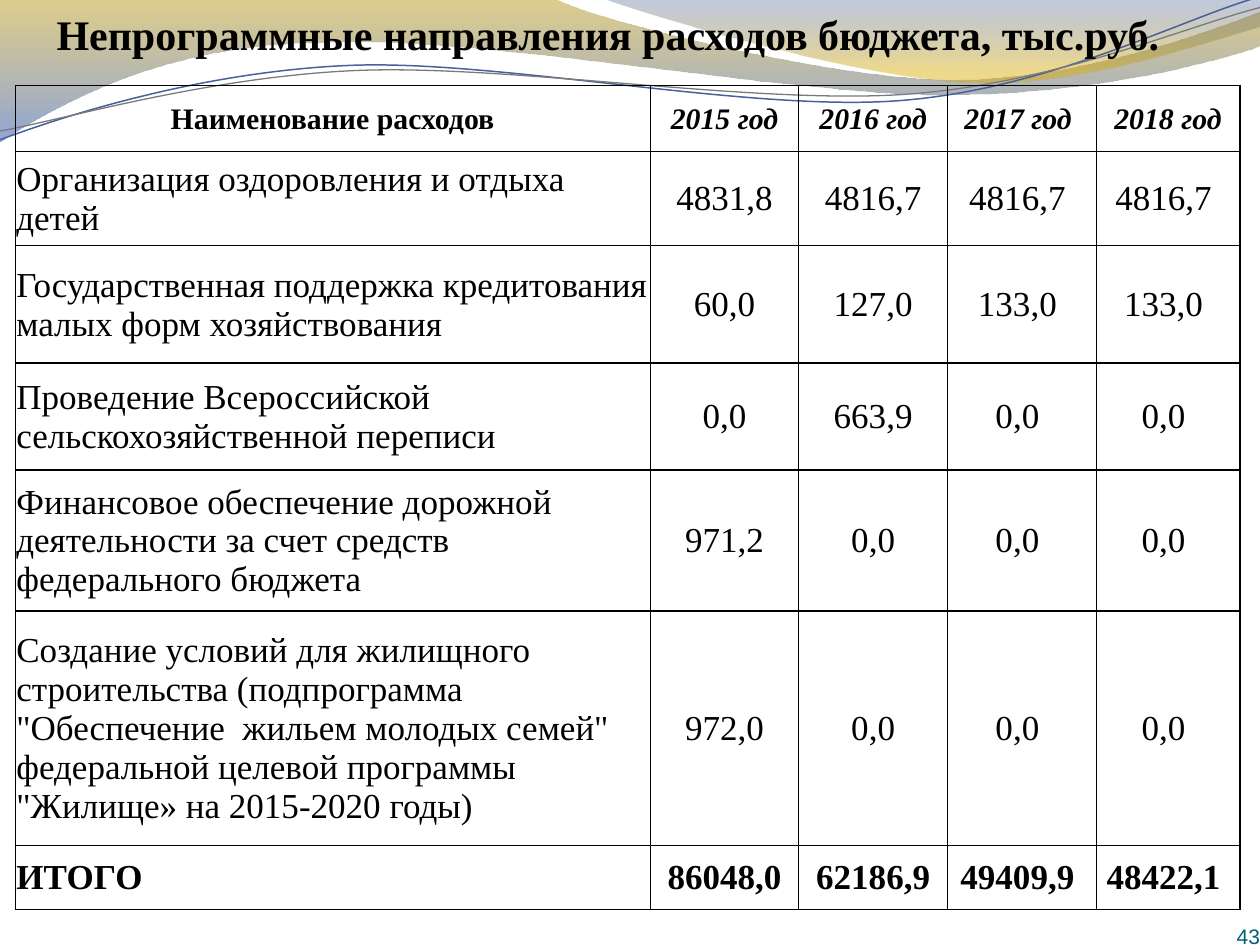
from lxml import etree
from pptx import Presentation
from pptx.dml.color import RGBColor
from pptx.enum.text import MSO_ANCHOR, PP_ALIGN
from pptx.oxml.ns import qn
from pptx.util import Inches, Pt

MIDDLE, BOTTOM, TOP = MSO_ANCHOR.MIDDLE, MSO_ANCHOR.BOTTOM, MSO_ANCHOR.TOP
LEFT, CENTER, RIGHT = PP_ALIGN.LEFT, PP_ALIGN.CENTER, PP_ALIGN.RIGHT

BLACK = RGBColor(0x00, 0x00, 0x00)
TEAL = RGBColor(0x04, 0x5D, 0x75)
GOLD = RGBColor(0xB6, 0x90, 0x00)
BLUE = RGBColor(0x33, 0x59, 0xB7)
NAVY = RGBColor(0x32, 0x4C, 0x8D)
YELLOW = RGBColor(0xD9, 0xAC, 0x00)
SLATE = RGBColor(0x48, 0x60, 0x9B)
GRAY = RGBColor(0x7A, 0x7A, 0x7A)
SERIF, SANS = "Times New Roman", "Arial"

# A pair of numbers is a straight step, six numbers are a cubic curve.
BIG_WAVE = [
    (0, -0.01), (4.4, -0.01),
    (4.76, 0.17, 6.64, 0.63, 7.58, 0.63), (8.53, 0.63, 9.58, 0.26, 10, 0.09),
    (10.01, 0.36),
    (9.83, 0.44, 8.7, 0.76, 7.46, 0.75), (6.22, 0.75, 3.82, 0.28, 2.57, 0.34),
    (1.29, 0.35, 0.46, 0.83, -0.01, 1.13), (0, -0.01),
]
SMALL_WAVE = [
    (4.79, -0.01),
    (5.09, 0.11, 6.82, 0.62, 7.69, 0.65), (8.56, 0.69, 9.61, 0.32, 10, 0.21),
    (10, 0), (4.79, -0.01),
]
BLUE_LINE = [
    (0, 1.11),
    (0.48, 0.93, 1.58, 0.57, 2.77, 0.52), (3.95, 0.47, 5.93, 0.89, 7.13, 0.8),
    (8.33, 0.71, 9.38, 0.15, 9.98, -0.02),
]
GRAY_LINE = [
    (0, 1.04),
    (0.47, 0.96, 1.64, 0.61, 2.83, 0.56), (4.03, 0.51, 5.97, 0.83, 7.17, 0.75),
    (8.36, 0.67, 9.41, 0.21, 10, 0.06),
]

COLS = [5.04, 1.18, 1.18, 1.18, 1.14]
HEIGHTS = [0.52, 0.75, 0.93, 0.85, 1.12, 1.86, 0.51]
ROWS = [
    ("Наименование расходов", "2015 год", "2016 год", "2017 год ", "2018 год"),
    ("Организация оздоровления и отдыха детей",
     "4831,8", "4816,7", "4816,7", "4816,7"),
    ("Государственная поддержка кредитования малых форм хозяйствования",
     "60,0", "127,0", "133,0", "133,0"),
    ("Проведение Всероссийской сельскохозяйственной переписи",
     "0,0", "663,9", "0,0", "0,0"),
    ("Финансовое обеспечение дорожной деятельности за счет средств "
     "федерального бюджета", "971,2", "0,0", "0,0", "0,0"),
    ("Создание условий для жилищного строительства (подпрограмма "
     "\"Обеспечение  жильем молодых семей\" федеральной целевой программы "
     "\"Жилище» на 2015-2020 годы)", "972,0", "0,0", "0,0", "0,0"),
    ("ИТОГО", "86048,0", "62186,9", "49409,9", "48422,1"),
]


def bend(shape, steps):
    """Join each three line steps of a curve into one cubic step."""
    lines = iter(list(shape._element.iter(qn("a:lnTo"))))
    for step in steps[1:]:
        first = next(lines)
        if len(step) == 2:
            continue
        curve = etree.Element(qn("a:cubicBezTo"))
        first.addprevious(curve)
        for line in (first, next(lines), next(lines)):
            curve.append(line[0])
            line.getparent().remove(line)


def draw(slide, steps, close):
    points = [(Inches(step[k]), Inches(step[k + 1]))
              for step in steps for k in range(0, len(step), 2)]
    pen = slide.shapes.build_freeform(*points[0])
    pen.add_line_segments(points[1:], close=close)
    shape = pen.convert_to_shape()
    shape.shadow.inherit = False
    bend(shape, steps)
    return shape


def add_wave(slide, steps, stops):
    """Draw a filled band; each stop is position, colour, opacity percent."""
    shape = draw(slide, steps, True)
    shape.line.fill.background()
    shape.fill.gradient()
    shape.fill.gradient_angle = 270
    for stop, (place, color, alpha) in zip(shape.fill.gradient_stops, stops):
        stop.position = place
        stop.color.rgb = color
    tones = shape._element.spPr.iter(qn("a:srgbClr"))
    for tone, (_, _, alpha) in zip(tones, stops):
        etree.SubElement(tone, qn("a:alpha"), val=str(alpha * 1000))


def add_curve(slide, steps, color, width):
    shape = draw(slide, steps, False)
    shape.fill.background()
    shape.line.color.rgb = color
    shape.line.width = Pt(width)


def style(para, size, color, name, align=LEFT, bold=False, italic=False):
    para.alignment = align
    font = para.font
    font.size, font.name = Pt(size), name
    font.bold, font.italic = bold, italic
    font.color.rgb = color


def add_text(slide, text, box, anchor, inset, **look):
    frame = slide.shapes.add_textbox(*map(Inches, box)).text_frame
    frame.word_wrap = True
    frame.vertical_anchor = anchor
    frame.margin_left = frame.margin_right = Inches(inset[0])
    frame.margin_top = frame.margin_bottom = Inches(inset[1])
    frame.text = text
    style(frame.paragraphs[0], **look)


def add_edges(cell, widths):
    """Set the borders of a cell before its fill is set."""
    props = cell._tc.get_or_add_tcPr()
    for side, width in zip("LRTB", widths):
        edge = etree.SubElement(props, qn(f"a:ln{side}"), w=str(Pt(width)))
        fill = etree.SubElement(edge, qn("a:solidFill"))
        etree.SubElement(fill, qn("a:srgbClr"), val=str(BLACK))


def add_cell(cell, text, row, col):
    last = len(ROWS) - 1
    add_edges(cell, (0.5, 1 if col == len(COLS) - 1 else 0.5,
                     1 if row > 2 else 0.5, 1 if row > 1 else 0.5))
    cell.fill.background()
    cell.vertical_anchor = MIDDLE
    cell.margin_left = cell.margin_top = Inches(0.01)
    cell.margin_right = Inches(0.08 if row and col > 2 else 0.01)
    cell.margin_bottom = 0
    cell.text = text
    style(cell.text_frame.paragraphs[0], 20 if row else 17, BLACK, SERIF,
          align=CENTER if col or not row else LEFT,
          bold=row in (0, last), italic=row == 0 and col > 0)


def add_budget(slide):
    frame = slide.shapes.add_table(
        len(ROWS), len(COLS), Inches(0.12), Inches(0.68),
        Inches(sum(COLS)), Inches(sum(HEIGHTS)))
    table = frame.table
    table.first_row = table.horz_banding = False
    for column, width in zip(table.columns, COLS):
        column.width = Inches(width)
    for r, (height, texts) in enumerate(zip(HEIGHTS, ROWS)):
        table.rows[r].height = Inches(height)
        for c, text in enumerate(texts):
            add_cell(table.cell(r, c), text, r, c)


def main():
    deck = Presentation()
    deck.slide_width, deck.slide_height = Inches(10), Inches(7.5)
    slide = deck.slides.add_slide(deck.slide_layouts[6])
    add_wave(slide, BIG_WAVE, [(0, GOLD, 45), (1, BLUE, 55)])
    add_wave(slide, SMALL_WAVE, [(0, NAVY, 30), (0.8, YELLOW, 45)])
    add_curve(slide, BLUE_LINE, SLATE, 0.85)
    add_curve(slide, GRAY_LINE, GRAY, 0.75)
    add_text(slide, "Непрограммные направления расходов бюджета, тыс.руб.",
             (0.35, 0.02, 9.21, 0.51), TOP, (0.1, 0.05),
             size=24, color=BLACK, name=SERIF, bold=True)
    add_budget(slide)
    add_text(slide, "43", (9.17, 7.13, 0.83, 0.4), BOTTOM, (0, 0),
             size=12, color=TEAL, name=SANS, align=RIGHT)
    deck.save("out.pptx")


if __name__ == "__main__":
    main()
